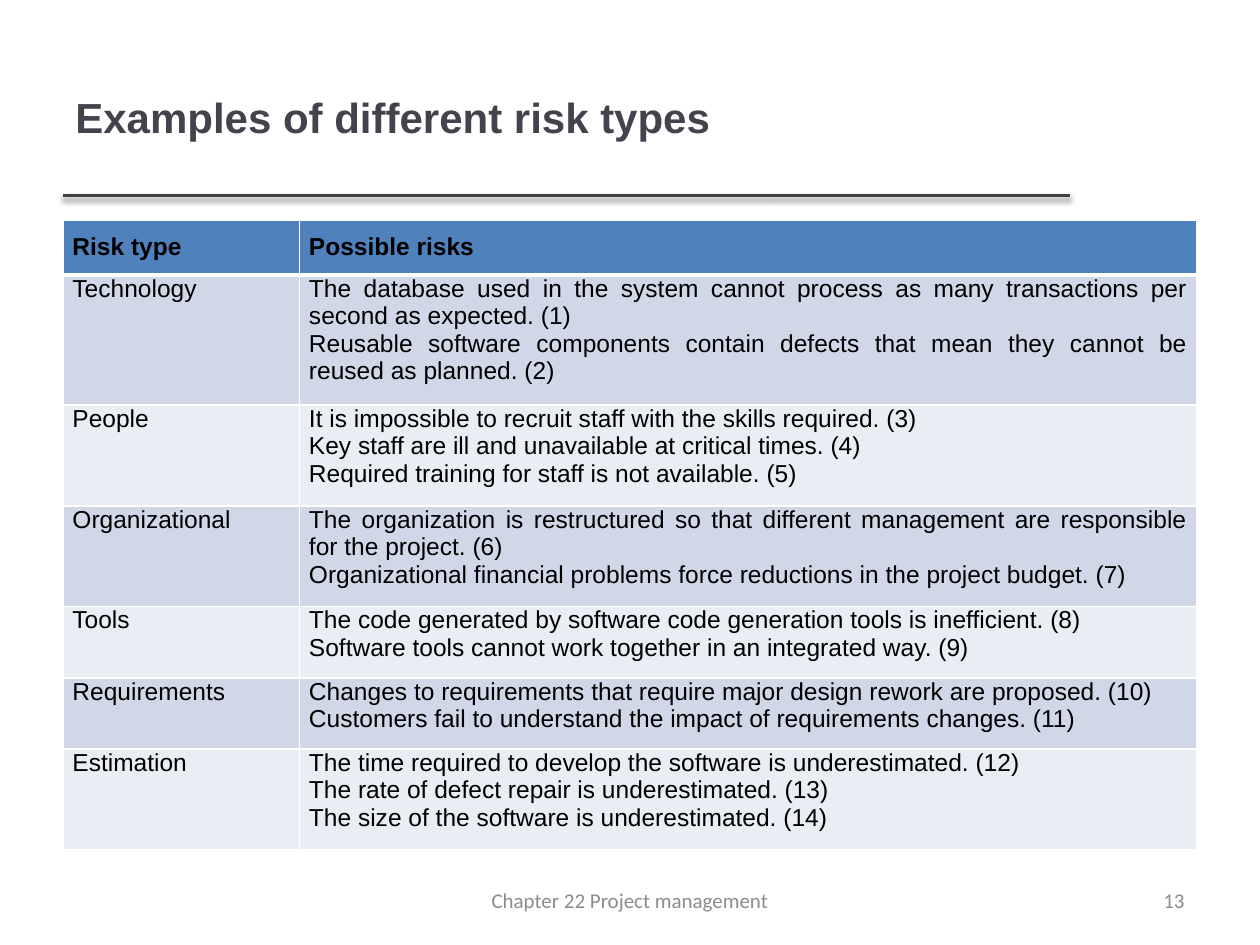
from lxml import etree
from pptx import Presentation
from pptx.dml.color import RGBColor
from pptx.enum.shapes import MSO_CONNECTOR
from pptx.enum.text import MSO_ANCHOR, PP_ALIGN
from pptx.oxml import parse_xml
from pptx.oxml.ns import nsdecls
from pptx.util import Cm, Pt

LEFT, CENTER, RIGHT = PP_ALIGN.LEFT, PP_ALIGN.CENTER, PP_ALIGN.RIGHT
JUSTIFY = PP_ALIGN.JUSTIFY
MIDDLE = MSO_ANCHOR.MIDDLE
STRAIGHT = MSO_CONNECTOR.STRAIGHT

BLACK = RGBColor(0x00, 0x00, 0x00)
TITLE = RGBColor(0x46, 0x42, 0x4D)
RULE = RGBColor(0x40, 0x40, 0x40)
GREY = RGBColor(0x8C, 0x8C, 0x8C)
HEAD = RGBColor(0x4F, 0x81, 0xBD)
DARK = RGBColor(0xD0, 0xD8, 0xE8)
LIGHT = RGBColor(0xE9, 0xED, 0xF4)

ROWS = [
    ("Risk type", ["Possible risks"]),
    ("Technology", [
        "The database used in the system cannot process as many transactions per second as expected. (1)",
        "Reusable software components contain defects that mean they cannot be reused as planned. (2)"]),
    ("People", [
        "It is impossible to recruit staff with the skills required. (3)",
        "Key staff are ill and unavailable at critical times. (4)",
        "Required training for staff is not available. (5)"]),
    ("Organizational", [
        "The organization is restructured so that different management are responsible for the project. (6)",
        "Organizational financial problems force reductions in the project budget. (7)"]),
    ("Tools", [
        "The code generated by software code generation tools is inefficient. (8)",
        "Software tools cannot work together in an integrated way. (9)"]),
    ("Requirements", [
        "Changes to requirements that require major design rework are proposed. (10)",
        "Customers fail to understand the impact of requirements changes. (11)"]),
    ("Estimation", [
        "The time required to develop the software is underestimated. (12)",
        "The rate of defect repair is underestimated. (13)",
        "The size of the software is underestimated. (14)"]),
]


def style(para, name, size, color, bold, align):
    para.alignment = align
    font = para.font
    font.name, font.size, font.bold = name, Pt(size), bold
    font.color.rgb = color


def border(cell, side, width):
    """Add a white border; sides must come in the order L, R, T, B, before the fill."""
    cell._tc.get_or_add_tcPr().append(parse_xml(
        f'<a:ln{side} {nsdecls("a")} w="{Pt(width)}"><a:solidFill>'
        f'<a:srgbClr val="FFFFFF"/></a:solidFill></a:ln{side}>'))


deck = Presentation()
deck.slide_width, deck.slide_height = Cm(25.4), Cm(19.05)
slide = deck.slides.add_slide(deck.slide_layouts[6])
shapes = slide.shapes

# Rule under the title, with a soft shadow
rule = shapes.add_connector(STRAIGHT, Cm(1.27), Cm(3.94), Cm(21.56), Cm(3.94))
rule.line.color.rgb = RULE
rule.line.width = Pt(2)
rule._element.spPr.append(etree.fromstring(
    f'<a:effectLst {nsdecls("a")}>'
    f'<a:outerShdw blurRad="{Pt(3.1)}" dist="{Pt(1.6)}" dir="5400000" rotWithShape="0">'
    '<a:srgbClr val="000000"><a:alpha val="38000"/></a:srgbClr>'
    '</a:outerShdw></a:effectLst>'))

# Title and footer
TEXTS = [
    ("Examples of different risk types", 1.27, 0.76, 20.27, 3.18,
     "Arial", 24, TITLE, True, LEFT),
    ("13", 18.2, 17.65, 5.93, 1.01, "Calibri", 12, GREY, False, RIGHT),
    ("Chapter 22 Project management", 8.68, 17.65, 8.04, 1.01,
     "Calibri", 12, GREY, False, CENTER),
]
for text, x, y, w, h, *look in TEXTS:
    frame = shapes.add_textbox(Cm(x), Cm(y), Cm(w), Cm(h)).text_frame
    frame.word_wrap = True
    frame.vertical_anchor = MIDDLE
    frame.text = text
    style(frame.paragraphs[0], *look)

# Risk table: rows grow to fit their text
holder = shapes.add_table(len(ROWS), 2, Cm(1.27), Cm(4.45), Cm(22.86), Cm(12.7))
table = holder.table
for col, width in zip(table.columns, (4.77, 18.09)):
    col.width = Cm(width)
for i, (kind, risks) in enumerate(ROWS):
    table.rows[i].height = Cm(1.04)
    for j, lines in enumerate(([kind], risks)):
        cell = table.cell(i, j)
        cell.margin_left = cell.margin_right = Cm(0.19)
        cell.margin_top = Cm(0 if i else 0.25)
        cell.margin_bottom = Cm(0.25)
        for side in "LRTB":
            thick = (i, side) in ((0, "B"), (1, "T"))
            border(cell, side, 3 if thick else 1)
        cell.fill.solid()
        cell.fill.fore_color.rgb = (DARK if i % 2 else LIGHT) if i else HEAD
        cell.text = "\n".join(lines)
        for para in cell.text_frame.paragraphs:
            style(para, "Arial", 14, BLACK, i == 0, JUSTIFY)
holder.height = Cm(12.7)

deck.save("out.pptx")
